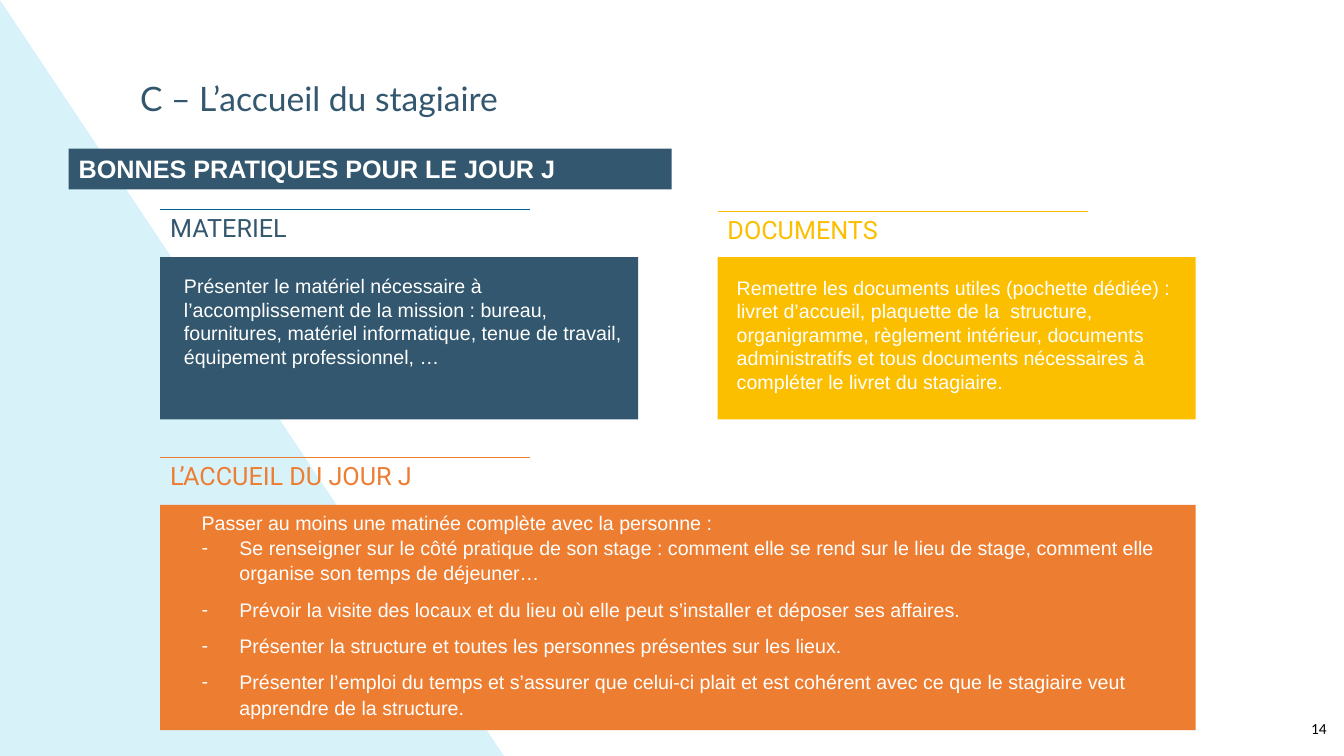
"""Build the slide on welcoming the trainee on the first day."""
from lxml.etree import SubElement
from pptx import Presentation
from pptx.dml.color import RGBColor
from pptx.enum.shapes import MSO_CONNECTOR, MSO_SHAPE
from pptx.oxml.ns import qn
from pptx.util import Pt

NAVY = RGBColor(0x33, 0x57, 0x6E)
YELLOW = RGBColor(0xFC, 0xBF, 0x00)
ORANGE = RGBColor(0xED, 0x7D, 0x31)
BLUE = RGBColor(0x00, 0x61, 0x8A)
PALE_BLUE = RGBColor(0xD7, 0xF2, 0xF9)
WHITE = RGBColor(0xFF, 0xFF, 0xFF)
BLACK = RGBColor(0x00, 0x00, 0x00)

LEFT, RIGHT = 114.5, 512.6
COLUMN_WIDTH, FULL_WIDTH = 341.4, 739.5
RULE_WIDTH = 264.4

presentation = Presentation()
presentation.slide_width = Pt(960)
presentation.slide_height = Pt(540)
slide = presentation.slides.add_slide(presentation.slide_layouts[6])


def add_block(kind, left, top, width, height, color):
    shape = slide.shapes.add_shape(kind, Pt(left), Pt(top), Pt(width), Pt(height))
    shape.shadow.inherit = False
    shape.fill.solid()
    shape.fill.fore_color.rgb = color
    shape.line.fill.background()
    return shape


def add_text(left, top, width, height, lines, font_name, size, color, bold=False):
    box = slide.shapes.add_textbox(Pt(left), Pt(top), Pt(width), Pt(height))
    frame = box.text_frame
    frame.word_wrap = True
    for index, line in enumerate(lines):
        paragraph = frame.add_paragraph() if index else frame.paragraphs[0]
        run = paragraph.add_run()
        run.text = line
        run.font.name = font_name
        run.font.size = Pt(size)
        run.font.color.rgb = color
        run.font.bold = bold
    return frame


triangle = add_block(MSO_SHAPE.ISOSCELES_TRIANGLE, 0, 0, 360, 540, PALE_BLUE)
triangle.adjustments[0] = 0

title = add_text(93, 55.4, 410, 55, ["C – L’accueil du stagiaire"], "Lato", 24, NAVY)
title.paragraphs[0].line_spacing = 0.9

add_block(MSO_SHAPE.RECTANGLE, 49.1, 106.2, 430.6, 29, NAVY)
add_text(49.1, 106.2, 430.6, 29, ["BONNES PRATIQUES POUR LE JOUR J"], "Arial", 18, WHITE, True)

sections = [
    ("MATERIEL", LEFT, 149.6, NAVY, BLUE, 183.6, COLUMN_WIDTH, 116),
    ("DOCUMENTS", RIGHT, 151, YELLOW, YELLOW, 183.6, COLUMN_WIDTH, 116),
    ("L’ACCUEIL DU JOUR J", LEFT, 326.7, ORANGE, ORANGE, 360.6, FULL_WIDTH, 161),
]
for heading, left, rule_top, color, rule_color, top, width, height in sections:
    add_block(MSO_SHAPE.RECTANGLE, left, top, width, height, color)
    add_text(left, rule_top - 1.3, width, 29, [heading], "Roboto", 18, color)
    rule = slide.shapes.add_connector(
        MSO_CONNECTOR.STRAIGHT, Pt(left), Pt(rule_top), Pt(left + RULE_WIDTH), Pt(rule_top)
    )
    rule.line.color.rgb = rule_color
    rule.line.width = Pt(1)
    SubElement(rule._element.spPr, qn("a:effectLst"))

equipment = (
    "Présenter le matériel nécessaire à l’accomplissement de la mission : bureau, "
    "fournitures, matériel informatique, tenue de travail, équipement professionnel, …"
)
documents = (
    "Remettre les documents utiles (pochette dédiée) : livret d’accueil, plaquette de la  "
    "structure, organigramme, règlement intérieur, documents administratifs et tous "
    "documents nécessaires à compléter le livret du stagiaire."
)
welcome = [
    "Passer au moins une matinée complète avec la personne :",
    "Se renseigner sur le côté pratique de son stage : comment elle se rend sur le lieu "
    "de stage, comment elle organise son temps de déjeuner…",
    "Prévoir la visite des locaux et du lieu où elle peut s’installer et déposer ses affaires.",
    "Présenter la structure et toutes les personnes présentes sur les lieux.",
    "Présenter l’emploi du temps et s’assurer que celui-ci plait et est cohérent avec ce "
    "que le stagiaire veut apprendre de la structure.",
]
add_text(124.3, 192.2, 331.4, 92, [equipment], "Arial", 14, WHITE)
add_text(519.2, 193.2, 327, 92, [documents], "Arial", 14, WHITE)
welcome_frame = add_text(136.9, 361.4, 701.3, 156, welcome, "Arial", 14, WHITE)
for paragraph in welcome_frame.paragraphs[1:]:
    paragraph.line_spacing = 1.07
    paragraph.space_after = Pt(8)
    properties = paragraph._p.get_or_add_pPr()
    properties.set("marL", str(Pt(27)))
    properties.set("indent", str(Pt(-27)))
    SubElement(properties, qn("a:buFont"), typeface="Arial")
    SubElement(properties, qn("a:buChar"), char="-")

add_text(929.4, 509.8, 27, 21, ["14"], "Calibri", 11, BLACK)

presentation.save("out.pptx")
